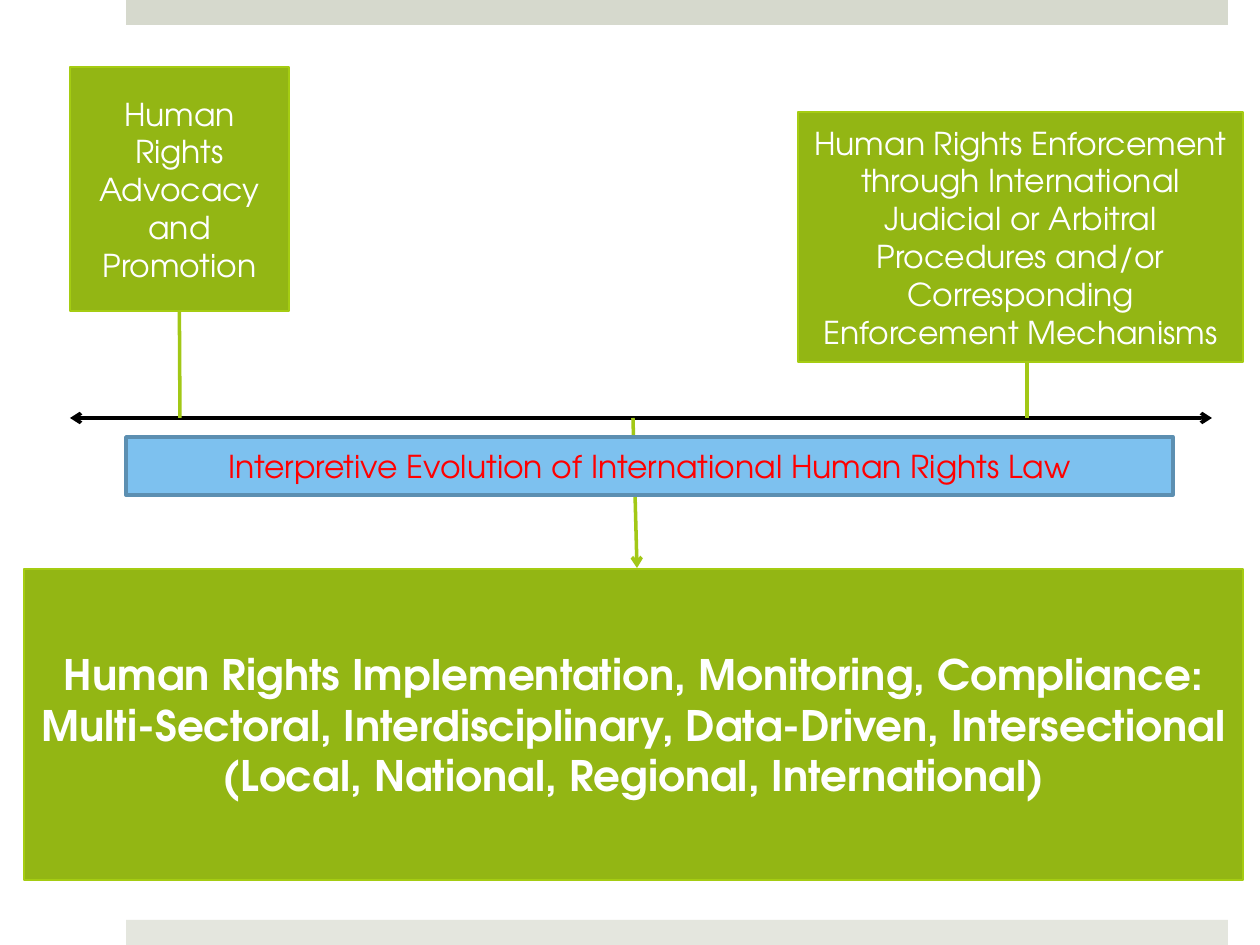
from dataclasses import dataclass

from lxml.etree import SubElement
from pptx import Presentation
from pptx.dml.color import RGBColor
from pptx.enum.shapes import MSO_CONNECTOR, MSO_SHAPE
from pptx.enum.text import MSO_ANCHOR, PP_ALIGN
from pptx.oxml.ns import qn
from pptx.util import Emu, Pt

PX_PER_INCH = 126
FONT = "TeX Gyre Adventor"

WHITE = RGBColor(0xFF, 0xFF, 0xFF)
BLACK = RGBColor(0x00, 0x00, 0x00)
RED = RGBColor(0xFF, 0x00, 0x00)
GREEN = RGBColor(0x93, 0xB6, 0x14)
GREEN_EDGE = RGBColor(0xA5, 0xCC, 0x12)
GREEN_LINE = RGBColor(0xA2, 0xC8, 0x16)
BLUE = RGBColor(0x7D, 0xC1, 0xEF)
BLUE_EDGE = RGBColor(0x5C, 0x8F, 0xB1)
TOP_GREY = RGBColor(0xD6, 0xD9, 0xCD)
BOTTOM_GREY = RGBColor(0xE4, 0xE6, 0xDE)


@dataclass
class Box:
    x: int
    y: int
    w: int
    h: int
    lines: tuple[str, ...] = ()
    fill: RGBColor = GREEN
    edge: RGBColor | None = GREEN_EDGE
    edge_pt: int = 1
    color: RGBColor = WHITE
    size: int = 18
    bold: bool = False


@dataclass
class Line:
    x1: int
    y1: int
    x2: int
    y2: int
    color: RGBColor = GREEN_LINE
    head: bool = False
    tail: bool = False


def px(n: int) -> Emu:
    return Emu(round(n * 914400 / PX_PER_INCH))


def draw_box(s, box: Box) -> None:
    sp = s.shapes.add_shape(MSO_SHAPE.RECTANGLE, px(box.x), px(box.y), px(box.w), px(box.h))
    sp.shadow.inherit = False
    sp.fill.solid()
    sp.fill.fore_color.rgb = box.fill
    if box.edge is None:
        sp.line.fill.background()
    else:
        sp.line.color.rgb = box.edge
        sp.line.width = Pt(box.edge_pt)
    tf = sp.text_frame
    tf.word_wrap = True
    tf.vertical_anchor = MSO_ANCHOR.MIDDLE
    for i, text in enumerate(box.lines):
        p = tf.add_paragraph() if i else tf.paragraphs[0]
        p.alignment = PP_ALIGN.CENTER
        r = p.add_run()
        r.text = text
        r.font.name = FONT
        r.font.size = Pt(box.size)
        r.font.bold = box.bold
        r.font.color.rgb = box.color


def draw_line(s, line: Line) -> None:
    cx = s.shapes.add_connector(
        MSO_CONNECTOR.STRAIGHT, px(line.x1), px(line.y1), px(line.x2), px(line.y2))
    cx.line.color.rgb = line.color
    cx.line.width = Pt(2)
    ln = cx.line._get_or_add_ln()
    for tag, wanted in (("a:headEnd", line.head), ("a:tailEnd", line.tail)):
        if wanted:
            SubElement(ln, qn(tag), type="arrow")
    SubElement(cx._element.spPr, qn("a:effectLst"))


AXIS_Y = 418

PARTS = [
    # Bands at the slide edges
    Box(126, 0, 1102, 25, fill=TOP_GREY, edge=None),
    Box(126, 920, 1102, 25, fill=BOTTOM_GREY, edge=None),
    # Spectrum axis and the arrows leaving it
    Line(70, AXIS_Y, 1212, AXIS_Y, BLACK, head=True, tail=True),
    Line(180, AXIS_Y, 179, 237, tail=True),
    Line(633, AXIS_Y, 637, 568, tail=True),
    # Advocacy, implementation and enforcement
    Box(70, 67, 219, 244, ("Human Rights Advocacy and Promotion",)),
    Box(24, 569, 1219, 311, (
        "Human Rights Implementation, Monitoring, Compliance:",
        "Multi-Sectoral, Interdisciplinary, Data-Driven, Intersectional",
        "(Local, National, Regional, International)",
    ), size=24, bold=True),
    Box(798, 112, 445, 250, (
        "Human Rights Enforcement through International Judicial or Arbitral "
        "Procedures and/or Corresponding Enforcement Mechanisms",
    )),
    Line(1027, AXIS_Y, 1027, 362),
    # Interpretive evolution banner
    Box(126, 437, 1047, 58, ("Interpretive Evolution of International Human Rights Law",),
        fill=BLUE, edge=BLUE_EDGE, edge_pt=2, color=RED),
]


def main() -> None:
    prs = Presentation()
    prs.slide_width, prs.slide_height = px(1260), px(945)
    s = prs.slides.add_slide(prs.slide_layouts[6])
    for part in PARTS:
        if isinstance(part, Box):
            draw_box(s, part)
        else:
            draw_line(s, part)
    prs.save("out.pptx")


if __name__ == "__main__":
    main()
